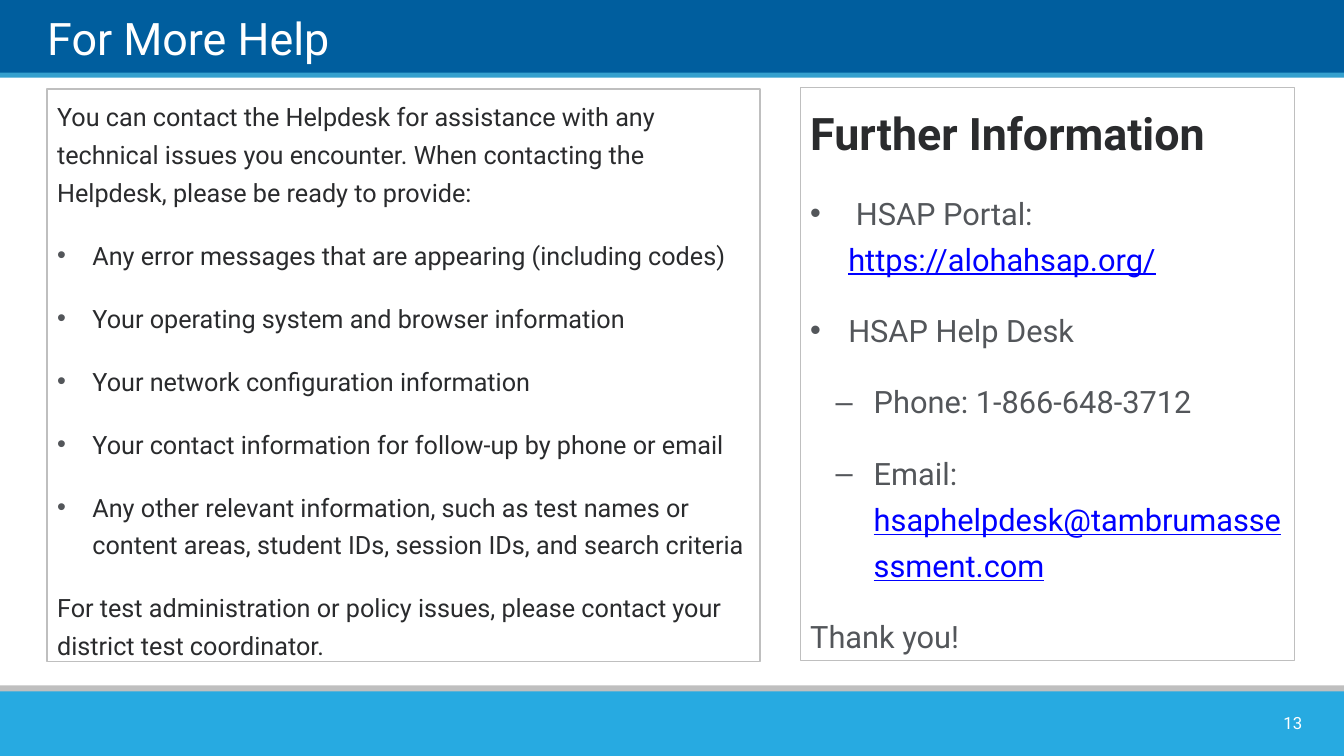
import pptx
import pptx.dml.color
import pptx.enum.shapes
import pptx.enum.text
import pptx.util
from dataclasses import dataclass
from lxml import etree
from pptx.util import Cm

ALIGN = pptx.enum.text.PP_ALIGN
ANCHOR = pptx.enum.text.MSO_ANCHOR


@dataclass(frozen=True)
class Theme:
    font: str = "Roboto"
    header: str = "005E9E"
    header_edge: str = "35A0CE"
    footer: str = "27AAE1"
    border: str = "BFBFBF"
    white: str = "FFFFFF"
    dark: str = "2A2B2D"
    grey: str = "53565A"
    link: str = "0000FF"
    heading_size: int = 32
    contact_size: int = 22
    body_size: int = 18
    number_size: int = 12


THEME = Theme()
BODY = {"size": THEME.body_size, "color": THEME.dark}
HEADING = {"size": THEME.heading_size, "color": THEME.dark, "bold": True}
CONTACT = {"size": THEME.contact_size, "color": THEME.grey}
LINK = {"size": THEME.contact_size, "color": THEME.link, "underline": True}

# Bullet: character, left margin, outline level
HELP_BULLET = ("•", Cm(0.89), 0)
CONTACT_BULLET = ("•", Cm(0.96), 0)
CONTACT_DASH = ("–", Cm(1.6), 1)
HANGING = {HELP_BULLET: Cm(0.89), CONTACT_BULLET: Cm(0.96), CONTACT_DASH: Cm(0.96)}

# Each paragraph: bullet, then its runs of text and format
HELP_ITEMS = [
    "Any error messages that are appearing (including codes)",
    "Your operating system and browser information",
    "Your network configuration information",
    "Your contact information for follow-up by phone or email",
    "Any other relevant information, such as test names or content areas, "
    "student IDs, session IDs, and search criteria",
]
HELP = [
    (None, [("You can contact the Helpdesk for assistance with any technical issues "
             "you encounter. When contacting the Helpdesk, please be ready to provide:", BODY)]),
    *[(HELP_BULLET, [(item, BODY)]) for item in HELP_ITEMS],
    (None, [("For test administration or policy issues, please contact your "
             "district test coordinator.", BODY)]),
]
FURTHER_INFORMATION = [
    (None, [("Further Information", HEADING)]),
    (CONTACT_BULLET, [(" HSAP Portal: ", CONTACT), ("https://alohahsap.org/", LINK)]),
    (CONTACT_BULLET, [("HSAP Help Desk", CONTACT)]),
    (CONTACT_DASH, [("Phone: 1-866-648-3712", CONTACT)]),
    (CONTACT_DASH, [("Email: ", CONTACT), ("hsaphelpdesk@tambrumassessment.com", LINK)]),
    (None, [("Thank you!", CONTACT)]),
]


def rgb(color):
    return pptx.dml.color.RGBColor.from_string(color)


def add_rectangle(slide, left, top, width, height, fill=None, line=None):
    shape = slide.shapes.add_shape(
        pptx.enum.shapes.MSO_SHAPE.RECTANGLE, Cm(left), Cm(top), Cm(width), Cm(height))
    shape.shadow.inherit = False
    if fill:
        shape.fill.solid()
        shape.fill.fore_color.rgb = rgb(fill)
    else:
        shape.fill.background()
    if line:
        shape.line.color.rgb = rgb(line)
        shape.line.width = pptx.util.Pt(1)
    else:
        shape.line.fill.background()
    return shape


def add_run(paragraph, text, style):
    run = paragraph.add_run()
    run.text = text
    values = {"name": THEME.font, **style}
    run.font.color.rgb = rgb(values.pop("color"))
    values["size"] = pptx.util.Pt(values["size"])
    for name, value in values.items():
        setattr(run.font, name, value)


def add_bullet(paragraph, bullet):
    character, margin, level = bullet
    paragraph.level = level
    properties = paragraph._p.get_or_add_pPr()
    properties.set("marL", str(int(margin)))
    properties.set("indent", str(-int(HANGING[bullet])))
    tag = pptx.oxml.ns.qn
    color = etree.SubElement(properties, tag("a:buClr"))
    etree.SubElement(color, tag("a:srgbClr"), val=THEME.grey)
    etree.SubElement(properties, tag("a:buFont"), typeface="Arial")
    etree.SubElement(properties, tag("a:buChar"), char=character)


def add_panel(slide, left, top, width, height, content):
    shape = add_rectangle(slide, left, top, width, height, line=THEME.border)
    frame = shape.text_frame
    frame.word_wrap = True
    frame.vertical_anchor = ANCHOR.TOP
    for index, (bullet, runs) in enumerate(content):
        paragraph = frame.add_paragraph() if index else frame.paragraphs[0]
        if bullet:
            add_bullet(paragraph, bullet)
        layout = {"alignment": ALIGN.LEFT, "line_spacing": 1.25,
                  "space_before": pptx.util.Pt(18 if index else 0)}
        for name, value in layout.items():
            setattr(paragraph, name, value)
        for text, style in runs:
            add_run(paragraph, text, style)


def add_label(slide, left, top, width, height, text, size, anchor, alignment, inset):
    box = slide.shapes.add_textbox(Cm(left), Cm(top), Cm(width), Cm(height))
    frame = box.text_frame
    values = {"word_wrap": True, "vertical_anchor": anchor}
    for side in ("left", "right", "top", "bottom"):
        values["margin_" + side] = Cm(inset)
    for name, value in values.items():
        setattr(frame, name, value)
    paragraph = frame.paragraphs[0]
    paragraph.alignment = alignment
    add_run(paragraph, text, {"size": size, "color": THEME.white})


def main():
    presentation = pptx.Presentation()
    presentation.slide_width = Cm(33.87)
    presentation.slide_height = Cm(19.05)
    slide = presentation.slides.add_slide(presentation.slide_layouts[6])

    # Header and footer bands
    for top, height, color in [(0, 1.88, THEME.header), (1.83, 0.13, THEME.header_edge),
                               (17.27, 0.36, THEME.border), (17.42, 1.63, THEME.footer)]:
        add_rectangle(slide, 0, top, 33.87, height, fill=color)

    # Title
    add_label(slide, 1.19, 0.18, 31.57, 1.45, "For More Help",
              THEME.heading_size, ANCHOR.BOTTOM, ALIGN.LEFT, 0)

    # Help and contact panels
    add_panel(slide, 1.19, 2.24, 17.96, 14.43, HELP)
    add_panel(slide, 20.17, 2.21, 12.45, 14.43, FURTHER_INFORMATION)

    # Slide number
    add_label(slide, 31.34, 17.83, 1.73, 0.76, "13",
              THEME.number_size, ANCHOR.MIDDLE, ALIGN.RIGHT, 0.25)

    presentation.save("out.pptx")


if __name__ == "__main__":
    main()
